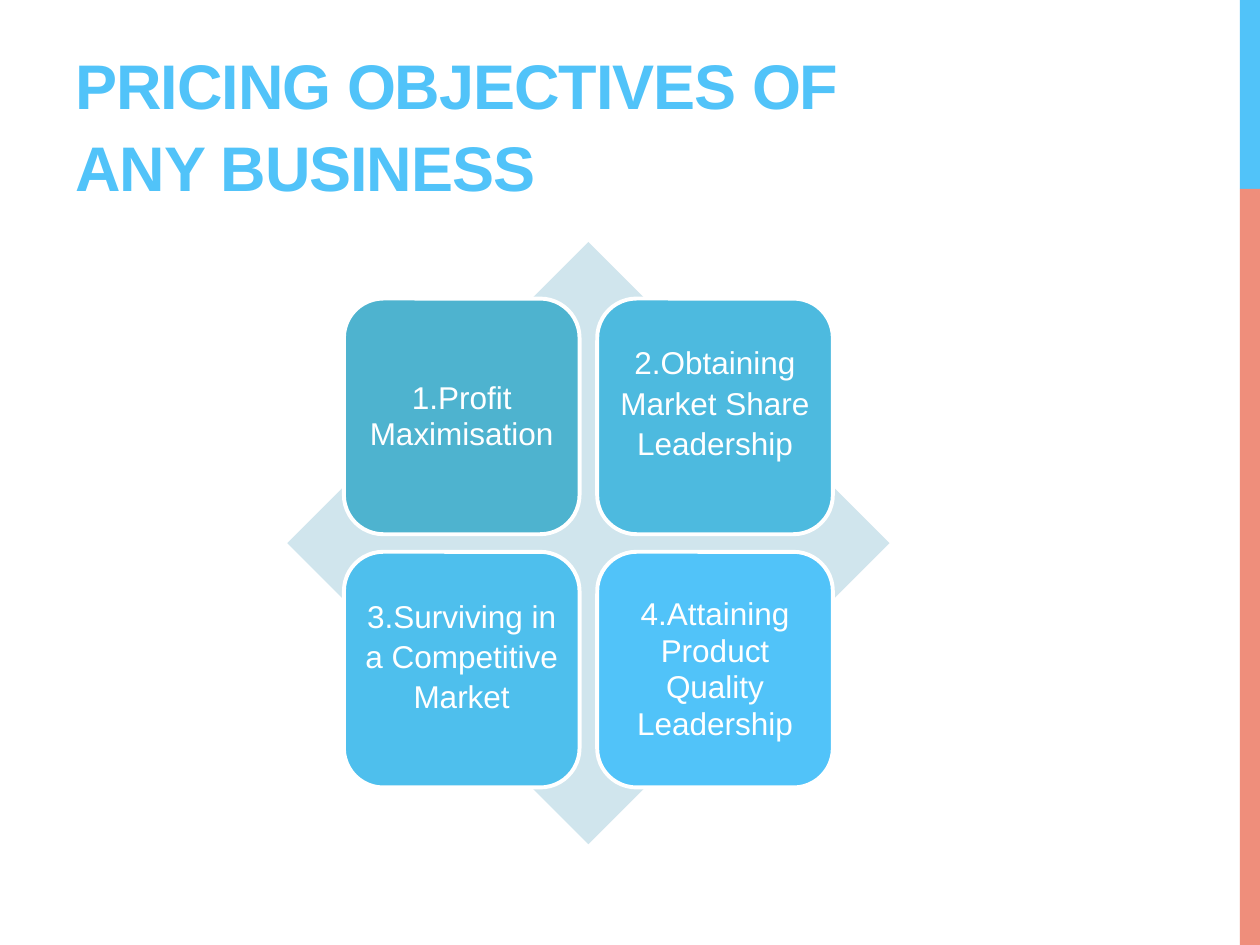
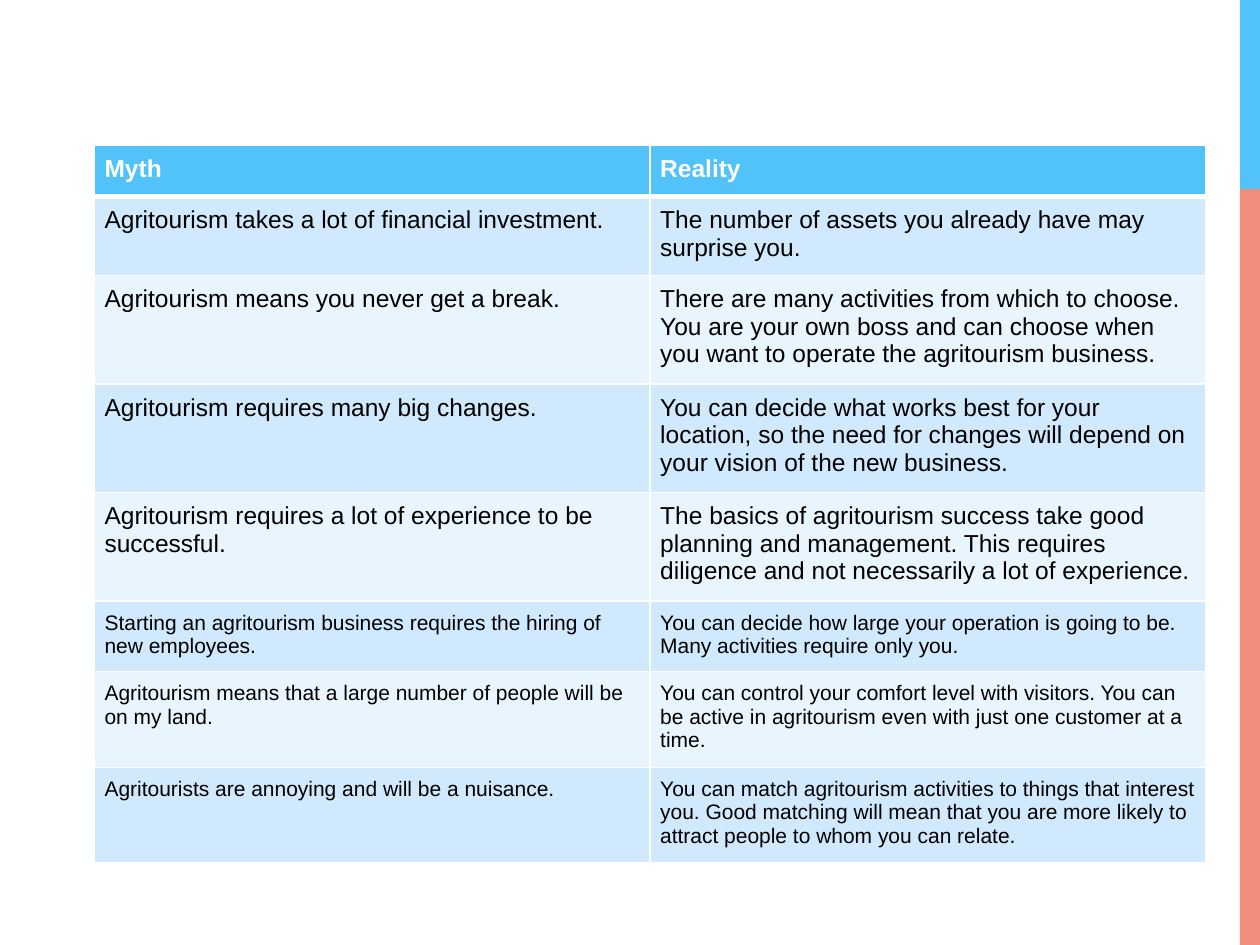
from dataclasses import dataclass

from lxml.etree import SubElement
from pptx import Presentation
from pptx.dml.color import RGBColor
from pptx.enum.shapes import MSO_SHAPE
from pptx.enum.text import MSO_ANCHOR, PP_ALIGN
from pptx.oxml.ns import qn
from pptx.util import Inches, Pt


@dataclass(frozen=True)
class Theme:
    font: str = "Arial"
    sky: str = "51C3F9"
    coral: str = "EF8E7B"
    white: str = "FFFFFF"
    black: str = "000000"
    diamond: str = "D0E5ED"
    tiles: tuple = ("4EB3CF", "4DBADF", "4EBFED", "51C3F9")
    stripes: tuple = ("D0E9FD", "E9F5FE")
    title_size: float = 36
    tile_size: float = 18
    table_size: float = 14
    small_table_size: float = 12


OBJECTIVES = [
    # text, line spacing, bottom inset
    ("1.Profit Maximisation", 0.97, 0.07),
    ("2.Obtaining Market Share Leadership", 1.07, 0.31),
    ("3.Surviving in a Competitive Market", 1.07, 0.31),
    ("4.Attaining Product Quality Leadership", 0.97, 0.07),
]

MYTHS = [
    ("Myth", "Reality"),
    ("Agritourism takes a lot of financial investment.",
     "The number of assets you already have may surprise you."),
    ("Agritourism means you never get a break.",
     "There are many activities from which to choose. You are your own boss and can "
     "choose when you want to operate the agritourism business."),
    ("Agritourism requires many big changes.",
     "You can decide what works best for your location, so the need for changes will "
     "depend on your vision of the new business."),
    ("Agritourism requires a lot of experience to be successful.",
     "The basics of agritourism success take good planning and management. This "
     "requires diligence and not necessarily a lot of experience."),
    ("Starting an agritourism business requires the hiring of new employees.",
     "You can decide how large your operation is going to be. Many activities require "
     "only you."),
    ("Agritourism means that a large number of people will be on my land.",
     "You can control your comfort level with visitors. You can be active in "
     "agritourism even with just one customer at a time."),
    ("Agritourists are annoying and will be a nuisance.",
     "You can match agritourism activities to things that interest you. Good matching "
     "will mean that you are more likely to attract people to whom you can relate."),
]
FIRST_SMALL_ROW = 5


def write(frame, text, *, font, size, color, bold=False, align=PP_ALIGN.LEFT,
          line_spacing=None, tracking=None):
    frame.word_wrap = True
    paragraph = frame.paragraphs[0]
    paragraph.alignment = align
    if line_spacing:
        paragraph.line_spacing = line_spacing
    run = paragraph.add_run()
    run.text = text
    run.font.name, run.font.size, run.font.bold = font, Pt(size), bold
    run.font.color.rgb = RGBColor.from_string(color)
    if tracking:
        run.font._element.set("spc", str(round(tracking * 100)))


def set_insets(holder, inset, bottom=None):
    holder.margin_left = holder.margin_right = holder.margin_top = Inches(inset)
    holder.margin_bottom = Inches(inset if bottom is None else bottom)


def set_borders(cell, color, widths):
    """Draw the left, right, top and bottom borders, in that order."""
    properties = cell._tc.get_or_add_tcPr()
    for edge, width in zip("LRTB", widths):
        line = SubElement(properties, qn(f"a:ln{edge}"), w=str(Pt(width)))
        fill = SubElement(line, qn("a:solidFill"))
        SubElement(fill, qn("a:srgbClr"), val=color)


class Deck:
    def __init__(self, theme):
        self.theme = theme
        self.presentation = Presentation()
        self.presentation.slide_width = Inches(10)
        self.presentation.slide_height = Inches(7.5)
        self.slide = None

    def new_slide(self):
        self.slide = self.presentation.slides.add_slide(
            self.presentation.slide_layouts[6])
        self.shape(MSO_SHAPE.RECTANGLE, 9.84, 0, 0.16, 1.5, self.theme.sky)
        self.shape(MSO_SHAPE.RECTANGLE, 9.84, 1.5, 0.16, 6, self.theme.coral)

    def shape(self, preset, left, top, width, height, fill, line_width=None):
        shape = self.slide.shapes.add_shape(
            preset, Inches(left), Inches(top), Inches(width), Inches(height))
        shape.shadow.inherit = False
        shape.fill.solid()
        shape.fill.fore_color.rgb = RGBColor.from_string(fill)
        if line_width:
            shape.line.color.rgb = RGBColor.from_string(self.theme.white)
            shape.line.width = Pt(line_width)
        else:
            shape.line.fill.background()
        return shape

    def title(self, text):
        frame = self.slide.shapes.add_textbox(
            Inches(0.5), Inches(0.17), Inches(6.33), Inches(1.5)).text_frame
        frame.vertical_anchor = MSO_ANCHOR.BOTTOM
        write(frame, text, font=self.theme.font, size=self.theme.title_size,
              color=self.theme.sky, bold=True, line_spacing=1.08, tracking=-0.6)

    def tile(self, left, top, side, fill, text, line_spacing, bottom_inset):
        tile = self.shape(MSO_SHAPE.ROUNDED_RECTANGLE, left, top, side, side, fill, 2.25)
        frame = tile.text_frame
        frame.vertical_anchor = MSO_ANCHOR.MIDDLE
        set_insets(frame, 0.07, bottom_inset)
        write(frame, text, font=self.theme.font, size=self.theme.tile_size,
              color=self.theme.white, align=PP_ALIGN.CENTER, line_spacing=line_spacing)

    def table(self, rows, left, top, width, row_height, first_small_row):
        theme = self.theme
        table = self.slide.shapes.add_table(
            len(rows), len(rows[0]), Inches(left), Inches(top), Inches(width),
            Inches(row_height * len(rows))).table
        for r, texts in enumerate(rows):
            header = r == 0
            fill = theme.sky if header else theme.stripes[(r - 1) % 2]
            size = theme.table_size if r < first_small_row else theme.small_table_size
            widths = (1, 1, 3 if r == 1 else 1, 3 if header else 1)
            for c, text in enumerate(texts):
                cell = table.cell(r, c)
                set_insets(cell, 0.08)
                set_borders(cell, theme.white, widths)
                cell.fill.solid()
                cell.fill.fore_color.rgb = RGBColor.from_string(fill)
                write(cell.text_frame, text, font=theme.font, size=size, bold=header,
                      color=theme.white if header else theme.black)


def add_objectives(deck):
    deck.new_slide()
    deck.title("PRICING OBJECTIVES OF ANY BUSINESS")
    deck.shape(MSO_SHAPE.DIAMOND, 2.28, 1.92, 4.78, 4.78, deck.theme.diamond)
    left, top, side, pitch = 2.73, 2.37, 1.87, 2.01
    for index, (objective, fill) in enumerate(zip(OBJECTIVES, deck.theme.tiles)):
        row, column = divmod(index, 2)
        deck.tile(left + column * pitch, top + row * pitch, side, fill, *objective)


def add_myths(deck):
    deck.new_slide()
    deck.table(MYTHS, 0.75, 1.15, 8.82, 0.41, FIRST_SMALL_ROW)


def main():
    deck = Deck(Theme())
    add_objectives(deck)
    add_myths(deck)
    deck.presentation.save("out.pptx")


if __name__ == "__main__":
    main()
